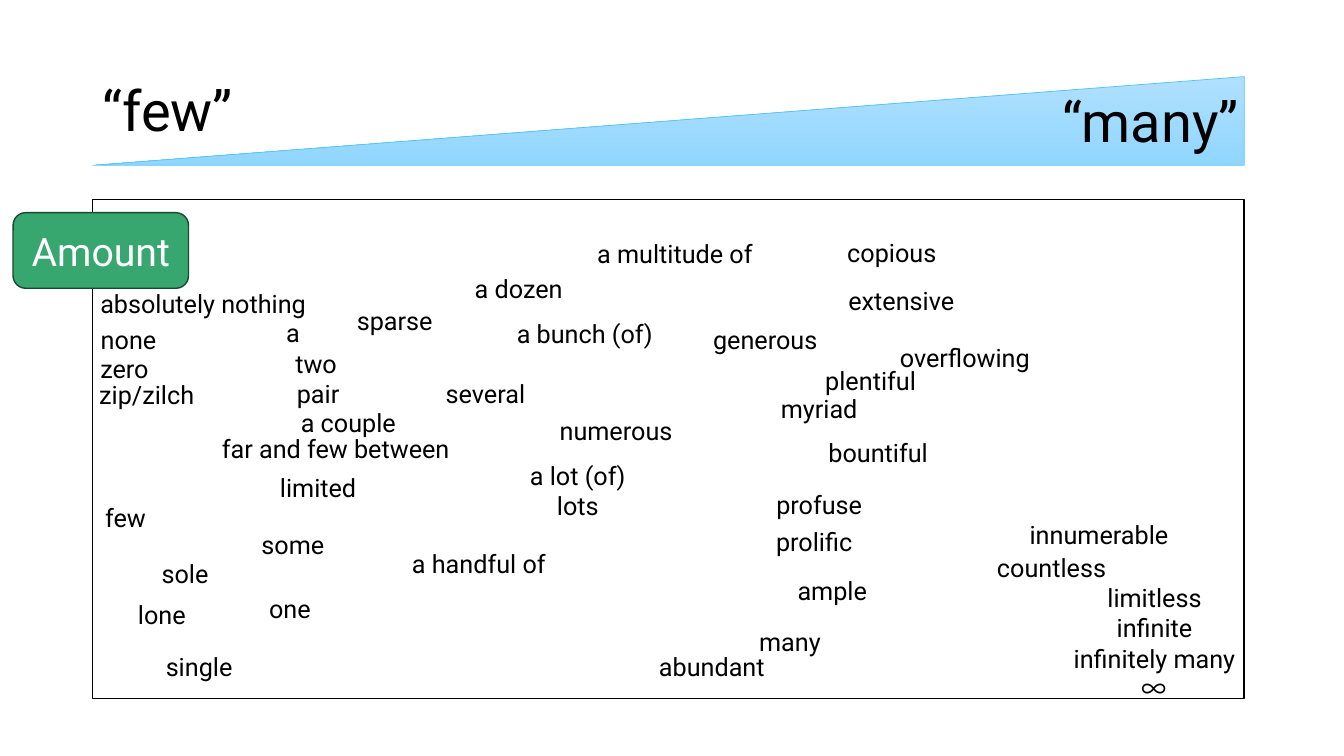
import dataclasses

import lxml.etree
import pptx
import pptx.dml.color
import pptx.enum.shapes
import pptx.enum.text
import pptx.oxml.ns
import pptx.util

Inches = pptx.util.Inches
Align = pptx.enum.text.PP_ALIGN
Anchor = pptx.enum.text.MSO_ANCHOR
Kind = pptx.enum.shapes.MSO_SHAPE


@dataclasses.dataclass(frozen=True)
class Theme:
    font: str = "Roboto"
    symbol: str = "Noto Sans CJK JP"
    ink: str = "000000"
    paper: str = "FFFFFF"
    green: str = "37A76F"
    edge: str = "184931"
    pale: str = "B0E0FE"
    sky: str = "90D6FF"
    rim: str = "51C3F9"
    title: int = 40
    label: int = 28
    word: int = 18


@dataclasses.dataclass(frozen=True)
class Box:
    left: float
    top: float
    width: float
    height: float

    def sides(self) -> tuple:
        return tuple(Inches(side) for side in dataclasses.astuple(self))


@dataclasses.dataclass(frozen=True)
class Word:
    text: str
    left: float
    top: float
    width: float = 1.17


THEME = Theme()

# Words run from little to much
WORDS = [
    Word("absolutely nothing", 0.67, 2.81, 2.69),
    Word("none", 0.69, 3.17),
    Word("zero", 0.65, 3.46),
    Word("zip/zilch", 0.87, 3.71),
    Word("few", 0.66, 4.93),
    Word("sole", 1.25, 5.49),
    Word("lone", 1.02, 5.9),
    Word("single", 1.39, 6.41),
    Word("one", 2.29, 5.84),
    Word("a", 2.32, 3.1),
    Word("two", 2.55, 3.41),
    Word("pair", 2.57, 3.7),
    Word("a couple", 2.87, 3.99),
    Word("far and few between", 1.97, 4.25, 2.72),
    Word("limited", 2.57, 4.64),
    Word("some", 2.32, 5.2),
    Word("sparse", 3.33, 2.98),
    Word("several", 4.23, 3.7),
    Word("a handful of", 3.93, 5.39, 1.64),
    Word("a dozen", 4.56, 2.66),
    Word("a bunch (of)", 5.01, 3.11, 1.58),
    Word("a multitude of", 5.76, 2.32, 1.87),
    Word("numerous", 5.4, 4.07, 1.42),
    Word("a lot (of)\nlots", 4.94, 4.52, 1.58),
    Word("abundant", 6.35, 6.41, 1.42),
    Word("many", 7.25, 6.16),
    Word("generous", 6.91, 3.17, 1.36),
    Word("myriad", 7.54, 3.85),
    Word("plentiful", 8.05, 3.58),
    Word("profuse", 7.54, 4.81),
    Word("prolific", 7.49, 5.17),
    Word("ample", 7.67, 5.66),
    Word("bountiful", 8.03, 4.29, 1.36),
    Word("copious", 8.26, 2.31),
    Word("extensive", 8.26, 2.78, 1.36),
    Word("overflowing", 8.78, 3.35, 1.58),
    Word("countless", 9.75, 5.43, 1.36),
    Word("innumerable", 10.08, 5.1, 1.64),
    Word("limitless\ninfinite\ninfinitely many\n∞", 10.44, 5.73, 2.02),
]


def shade(code: str) -> pptx.dml.color.RGBColor:
    return pptx.dml.color.RGBColor.from_string(code)


def write(shape, text: str, size: int, color: str, align=Align.CENTER):
    """Fill a shape with one paragraph per line of text."""
    frame = shape.text_frame
    frame.word_wrap = True
    frame.text = text
    for para in frame.paragraphs:
        para.alignment = align
        para.font.size = pptx.util.Pt(size)
        para.font.name = THEME.font
        para.font.color.rgb = shade(color)
        if para.text == "∞":
            para.font.name = THEME.symbol
            face = para.runs[0].font
            face.name = THEME.symbol
            east = lxml.etree.SubElement(face._element, pptx.oxml.ns.qn("a:ea"))
            east.set("typeface", THEME.symbol)
    return frame


def draw_shape(slide, kind, box: Box, fill: str, line: str, weight: float = 1):
    shape = slide.shapes.add_shape(kind, *box.sides())
    shape.shadow.inherit = False
    shape.fill.solid()
    shape.fill.fore_color.rgb = shade(fill)
    shape.line.color.rgb = shade(line)
    shape.line.width = pptx.util.Pt(weight)
    return shape


def draw_wedge(slide, box: Box) -> None:
    wedge = draw_shape(slide, Kind.RIGHT_TRIANGLE, box, THEME.sky, THEME.rim, 0.5)
    wedge._element.spPr.xfrm.set("flipH", "1")
    wedge.fill.gradient()
    wedge.fill.gradient_angle = 270
    for stop, code in zip(wedge.fill.gradient_stops, (THEME.pale, THEME.sky)):
        stop.color.rgb = shade(code)


def draw_title(slide, text: str, box: Box) -> None:
    shape = slide.shapes.add_textbox(*box.sides())
    frame = write(shape, text, THEME.title, THEME.ink, Align.JUSTIFY)
    frame.vertical_anchor = Anchor.MIDDLE
    frame.paragraphs[0].line_spacing = 0.9


def draw_word(slide, word: Word) -> None:
    lines = word.text.count("\n") + 1
    box = Box(word.left, word.top, word.width, 0.1 + 0.3 * lines)
    shape = slide.shapes.add_textbox(*box.sides())
    frame = write(shape, word.text, THEME.word, THEME.ink)
    frame.auto_size = pptx.enum.text.MSO_AUTO_SIZE.SHAPE_TO_FIT_TEXT


def main() -> None:
    deck = pptx.Presentation()
    deck.slide_width, deck.slide_height = Inches(13.33), Inches(7.5)
    slide = deck.slides.add_slide(deck.slide_layouts[6])

    # Word field and the growing wedge above it
    field = Box(0.92, 1.98, 11.42, 4.95)
    draw_shape(slide, Kind.RECTANGLE, field, THEME.paper, THEME.ink)
    draw_wedge(slide, Box(0.92, 0.76, 11.42, 0.88))

    # Ends of the scale
    draw_title(slide, "“few”", Box(0.92, 0.4, 11.5, 1.45))
    draw_title(slide, "“many”", Box(10.44, 0.76, 1.98, 0.94))

    # Topic label
    label = draw_shape(slide, Kind.ROUNDED_RECTANGLE, Box(0.13, 2.11, 1.74, 0.75),
                       THEME.green, THEME.edge)
    frame = write(label, "Amount", THEME.label, THEME.paper)
    frame.vertical_anchor = Anchor.MIDDLE

    # Scattered words
    for word in WORDS:
        draw_word(slide, word)

    deck.save("out.pptx")


if __name__ == "__main__":
    main()
